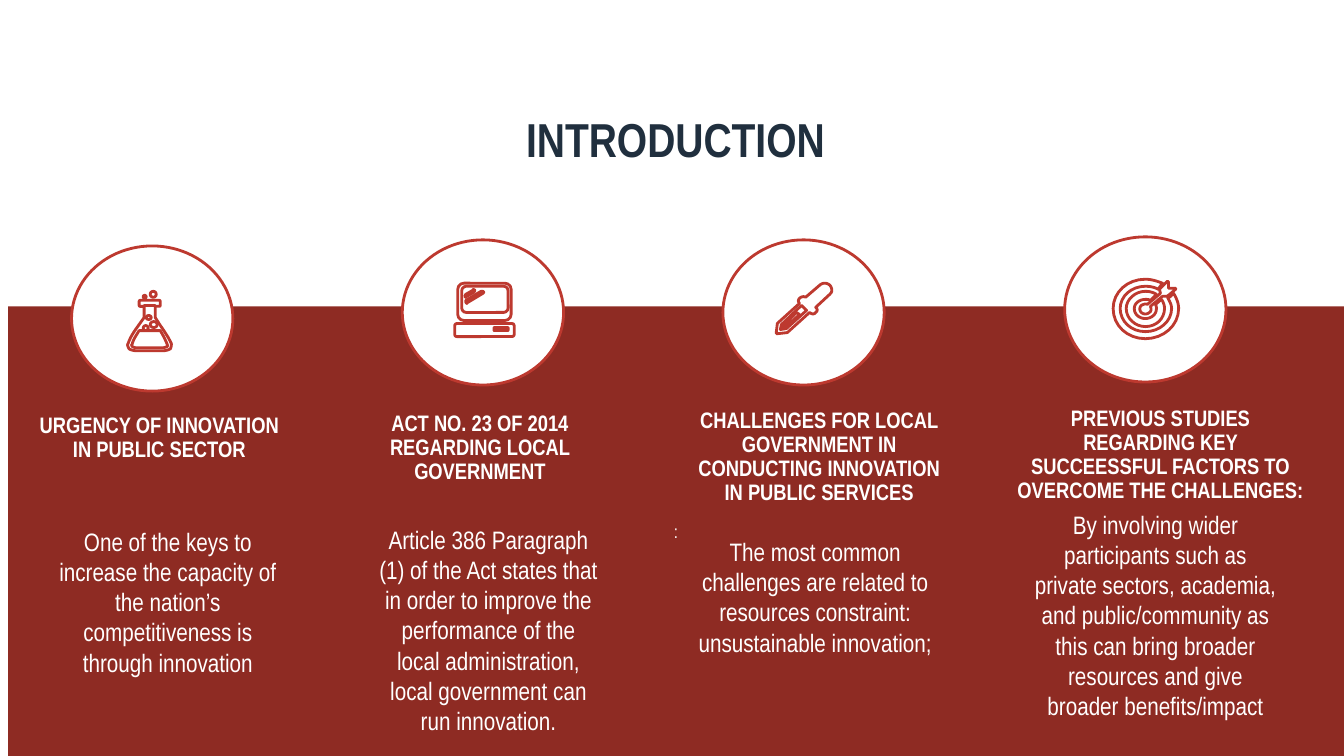
"""Build the introduction slide with four icon columns."""
from dataclasses import dataclass

from pptx import Presentation
from pptx.dml.color import RGBColor
from pptx.enum.shapes import MSO_SHAPE
from pptx.enum.text import MSO_ANCHOR, PP_ALIGN
from pptx.util import Inches, Pt

OVAL = MSO_SHAPE.OVAL
ROUNDED = MSO_SHAPE.ROUNDED_RECTANGLE
RECTANGLE = MSO_SHAPE.RECTANGLE
CENTER = PP_ALIGN.CENTER
MIDDLE = MSO_ANCHOR.MIDDLE

FONT = "Arial Narrow"
WHITE, RED, DARK_RED, NAVY = "FFFFFF", "BD392F", "8E2B23", "202F3E"
CIRCLE_WIDTH, CIRCLE_HEIGHT = 1.6, 1.44
CURVE_STEPS = 8

Contour = list[tuple[float, ...]]


@dataclass(frozen=True)
class Box:
    left: float
    top: float
    width: float
    height: float


@dataclass(frozen=True)
class Preset:
    kind: MSO_SHAPE
    box: Box


@dataclass(frozen=True)
class Outline:
    """Contours made of points (x, y) and Bezier curves (x1, y1, x2, y2, x, y)."""
    contours: list[Contour]


@dataclass(frozen=True)
class Column:
    circle_left: float
    circle_top: float
    icon: list[Preset | Outline]
    heading_box: Box
    heading: str
    body_box: Box
    body: str


FLASK = [
    Preset(ROUNDED, Box(1.38, 2.98, 0.21, 0.06)),
    Outline([
        [(1.7, 3.41), (1.66, 3.32, 1.6, 3.25, 1.54, 3.15), (1.54, 3.03), (1.43, 3.03), (1.43, 3.15),
         (1.36, 3.25, 1.3, 3.32, 1.27, 3.41), (1.26, 3.42, 1.27, 3.44, 1.28, 3.46),
         (1.29, 3.47, 1.33, 3.48, 1.35, 3.48), (1.62, 3.48), (1.64, 3.48, 1.68, 3.47, 1.69, 3.46),
         (1.7, 3.44, 1.7, 3.42, 1.7, 3.41)],
        [(1.66, 3.44), (1.65, 3.44, 1.63, 3.45, 1.62, 3.45), (1.35, 3.45),
         (1.33, 3.45, 1.32, 3.44, 1.31, 3.44), (1.31, 3.43, 1.3, 3.42, 1.31, 3.42),
         (1.32, 3.37, 1.35, 3.33, 1.38, 3.28), (1.59, 3.28), (1.62, 3.33, 1.64, 3.37, 1.66, 3.42)],
    ]),
    Preset(OVAL, Box(1.49, 3.19, 0.07, 0.06)),
    Preset(OVAL, Box(1.45, 3.13, 0.05, 0.04)),
    Preset(OVAL, Box(1.42, 3.23, 0.05, 0.05)),
    Preset(OVAL, Box(1.49, 2.89, 0.06, 0.06)),
    Preset(OVAL, Box(1.42, 2.93, 0.03, 0.03)),
]
COMPUTER = [
    Preset(ROUNDED, Box(4.51, 3.21, 0.59, 0.13)),
    Preset(ROUNDED, Box(4.9, 3.25, 0.14, 0.03)),
    Preset(ROUNDED, Box(4.54, 2.81, 0.53, 0.37)),
    Preset(ROUNDED, Box(4.58, 2.84, 0.46, 0.26)),
    Outline([[(4.62, 2.95), (4.61, 2.94), (4.62, 2.92), (4.69, 2.88),
              (4.69, 2.87, 4.7, 2.87, 4.71, 2.88), (4.71, 2.88, 4.71, 2.89, 4.7, 2.9), (4.63, 2.94)]]),
    Outline([[(4.63, 3.01), (4.62, 3), (4.62, 2.98), (4.77, 2.89),
              (4.78, 2.89, 4.79, 2.89, 4.79, 2.89), (4.8, 2.9, 4.8, 2.9, 4.79, 2.91), (4.64, 3)]]),
]
DROPPER = [
    Outline([[(7.9, 3.1), (7.77, 3.23), (7.76, 3.25), (7.79, 3.25), (7.93, 3.12)]]),
    Outline([
        [(8.25, 2.88), (8.25, 2.86, 8.24, 2.84, 8.23, 2.83), (8.22, 2.82, 8.2, 2.81, 8.18, 2.81),
         (8.16, 2.81, 8.14, 2.82, 8.13, 2.83), (7.99, 2.95), (7.98, 2.94, 7.95, 2.94, 7.93, 2.96),
         (7.92, 2.97, 7.91, 2.99, 7.93, 3.01), (7.72, 3.2), (7.71, 3.21), (7.7, 3.29), (7.7, 3.31),
         (7.72, 3.31), (7.81, 3.3), (7.82, 3.29), (8.03, 3.1), (8.05, 3.12, 8.08, 3.12, 8.09, 3.1),
         (8.11, 3.09, 8.11, 3.06, 8.09, 3.05), (8.23, 2.92), (8.24, 2.91, 8.25, 2.9, 8.25, 2.88)],
        [(7.8, 3.26), (7.74, 3.27), (7.75, 3.22), (7.95, 3.03), (8, 3.08)],
    ]),
]
TARGET = [
    Outline([[
        (11.64, 2.91), (11.61, 2.94), (11.6, 2.95, 11.59, 2.95, 11.58, 2.95),
        (11.6, 2.99, 11.62, 3.02, 11.62, 3.06), (11.62, 3.19, 11.5, 3.29, 11.36, 3.29),
        (11.22, 3.29, 11.11, 3.19, 11.11, 3.06), (11.11, 2.94, 11.22, 2.84, 11.36, 2.84),
        (11.41, 2.84, 11.45, 2.85, 11.49, 2.87), (11.5, 2.85), (11.53, 2.81),
        (11.48, 2.79, 11.42, 2.77, 11.36, 2.77), (11.18, 2.77, 11.04, 2.9, 11.04, 3.06),
        (11.04, 3.23, 11.18, 3.36, 11.36, 3.36), (11.54, 3.36, 11.69, 3.23, 11.69, 3.06),
        (11.69, 3.01, 11.67, 2.96, 11.64, 2.91)]]),
    Outline([[
        (11.51, 2.86), (11.58, 2.79), (11.59, 2.8), (11.59, 2.86), (11.66, 2.86), (11.66, 2.87),
        (11.59, 2.93), (11.57, 2.94), (11.53, 2.94), (11.41, 3.04),
        (11.42, 3.06, 11.42, 3.09, 11.4, 3.1), (11.38, 3.12, 11.34, 3.12, 11.32, 3.1),
        (11.3, 3.08, 11.3, 3.05, 11.32, 3.03), (11.34, 3.02, 11.36, 3.01, 11.38, 3.02),
        (11.51, 2.91), (11.5, 2.87)]]),
    Outline([[
        (11.36, 2.97), (11.38, 2.97, 11.39, 2.97, 11.41, 2.98), (11.47, 2.92),
        (11.44, 2.9, 11.4, 2.89, 11.36, 2.89), (11.26, 2.89, 11.17, 2.97, 11.17, 3.06),
        (11.17, 3.16, 11.26, 3.24, 11.36, 3.24), (11.47, 3.24, 11.55, 3.16, 11.55, 3.06),
        (11.55, 3.03, 11.54, 3, 11.52, 2.97), (11.46, 3.02), (11.47, 3.04, 11.47, 3.05, 11.47, 3.06),
        (11.47, 3.12, 11.42, 3.16, 11.36, 3.16), (11.3, 3.16, 11.25, 3.12, 11.25, 3.06),
        (11.25, 3.01, 11.3, 2.97, 11.36, 2.97)]]),
]
COLUMNS = [
    Column(0.71, 2.44, FLASK,
           Box(0.13, 4.06, 2.85, 0.43), "URGENCY OF INNOVATION IN PUBLIC SECTOR",
           Box(0.42, 5.17, 2.44, 0.73),
           "One of the keys to increase the capacity of the nation’s competitiveness is through innovation"),
    Column(3.99, 2.38, COMPUTER,
           Box(3.31, 4.04, 2.85, 0.43), "ACT NO. 23 OF 2014 REGARDING LOCAL GOVERNMENT",
           Box(3.6, 5.15, 2.44, 0.73),
           "Article 386 Paragraph (1) of the Act states that in order to improve the performance of the "
           "local administration, local government can run innovation."),
    Column(7.17, 2.38, DROPPER,
           Box(6.68, 4.01, 2.84, 0.72),
           "CHALLENGES FOR LOCAL GOVERNMENT IN CONDUCTING INNOVATION IN PUBLIC SERVICES",
           Box(6.75, 5.27, 2.62, 0.73),
           "The most common challenges are related to resources constraint: unsustainable innovation;"),
    Column(10.56, 2.35, TARGET,
           Box(9.9, 3.99, 3.17, 0.38),
           "PREVIOUS STUDIES REGARDING KEY SUCCEESSFUL FACTORS TO OVERCOME THE CHALLENGES:",
           Box(10.08, 5, 2.71, 0.73),
           "By involving wider participants such as private sectors, academia, and public/community as "
           "this can bring broader resources and give broader benefits/impact"),
]


def color(value: str) -> RGBColor:
    return RGBColor.from_string(value)


def place(box: Box) -> tuple:
    return Inches(box.left), Inches(box.top), Inches(box.width), Inches(box.height)


def style_shape(shape, fill: str, line: str | None = None) -> None:
    shape.shadow.inherit = False
    shape.fill.solid()
    shape.fill.fore_color.rgb = color(fill)
    if line is None:
        shape.line.fill.background()
    else:
        shape.line.color.rgb = color(line)
        shape.line.width = Pt(2)


def write_text(shape, text: str, size: int, text_color: str = WHITE, bold: bool = False):
    shape.text_frame.word_wrap = True
    paragraph = shape.text_frame.paragraphs[0]
    paragraph.text = text
    paragraph.alignment = CENTER
    paragraph.font.name = FONT
    paragraph.font.size = Pt(size)
    paragraph.font.bold = bold
    paragraph.font.color.rgb = color(text_color)
    return paragraph


def flatten(contour: Contour) -> list[tuple[int, int]]:
    points = [contour[0]]
    for segment in contour[1:]:
        if len(segment) == 2:
            points.append(segment)
            continue
        start = points[-1]
        first, second, end = segment[:2], segment[2:4], segment[4:]
        for step in range(1, CURVE_STEPS + 1):
            t = step / CURVE_STEPS
            weights = ((1 - t) ** 3, 3 * t * (1 - t) ** 2, 3 * t * t * (1 - t), t ** 3)
            points.append(tuple(sum(weight * point[axis] for weight, point in
                                    zip(weights, (start, first, second, end))) for axis in (0, 1)))
    return [(Inches(x), Inches(y)) for x, y in points]


def draw_part(shapes, part: Preset | Outline) -> None:
    if isinstance(part, Preset):
        shape = shapes.add_shape(part.kind, *place(part.box))
    else:
        contours = [flatten(contour) for contour in part.contours]
        builder = shapes.build_freeform(*contours[0][0])
        builder.add_line_segments(contours[0][1:])
        for contour in contours[1:]:
            builder.move_to(*contour[0])
            builder.add_line_segments(contour[1:])
        shape = builder.convert_to_shape()
    style_shape(shape, WHITE, RED)


def draw_column(shapes, column: Column) -> None:
    circle = Box(column.circle_left, column.circle_top, CIRCLE_WIDTH, CIRCLE_HEIGHT)
    for part in [Preset(OVAL, circle), *column.icon]:
        draw_part(shapes, part)
    body = write_text(shapes.add_textbox(*place(column.body_box)), column.body, 18)
    heading = write_text(shapes.add_textbox(*place(column.heading_box)), column.heading, 16, bold=True)
    heading.line_spacing = 0.9
    for paragraph in (body, heading):
        paragraph.space_before = Pt(14)
        paragraph._p.get_or_add_pPr().set("marL", str(Inches(0.05)))


def main() -> None:
    presentation = Presentation()
    presentation.slide_width, presentation.slide_height = Inches(13.33), Inches(7.5)
    shapes = presentation.slides.add_slide(presentation.slide_layouts[6]).shapes
    title = shapes.add_textbox(*place(Box(0.67, 1.13, 12.06, 0.65)))
    write_text(title, "INTRODUCTION", 34, NAVY, bold=True).line_spacing = 0.85
    panel = shapes.add_shape(RECTANGLE, *place(Box(0.08, 3.04, 13.25, 4.46)))
    style_shape(panel, DARK_RED)
    write_text(panel, ":", 13)
    panel.text_frame.vertical_anchor = MIDDLE
    for column in COLUMNS:
        draw_column(shapes, column)
    presentation.save("out.pptx")


if __name__ == "__main__":
    main()
